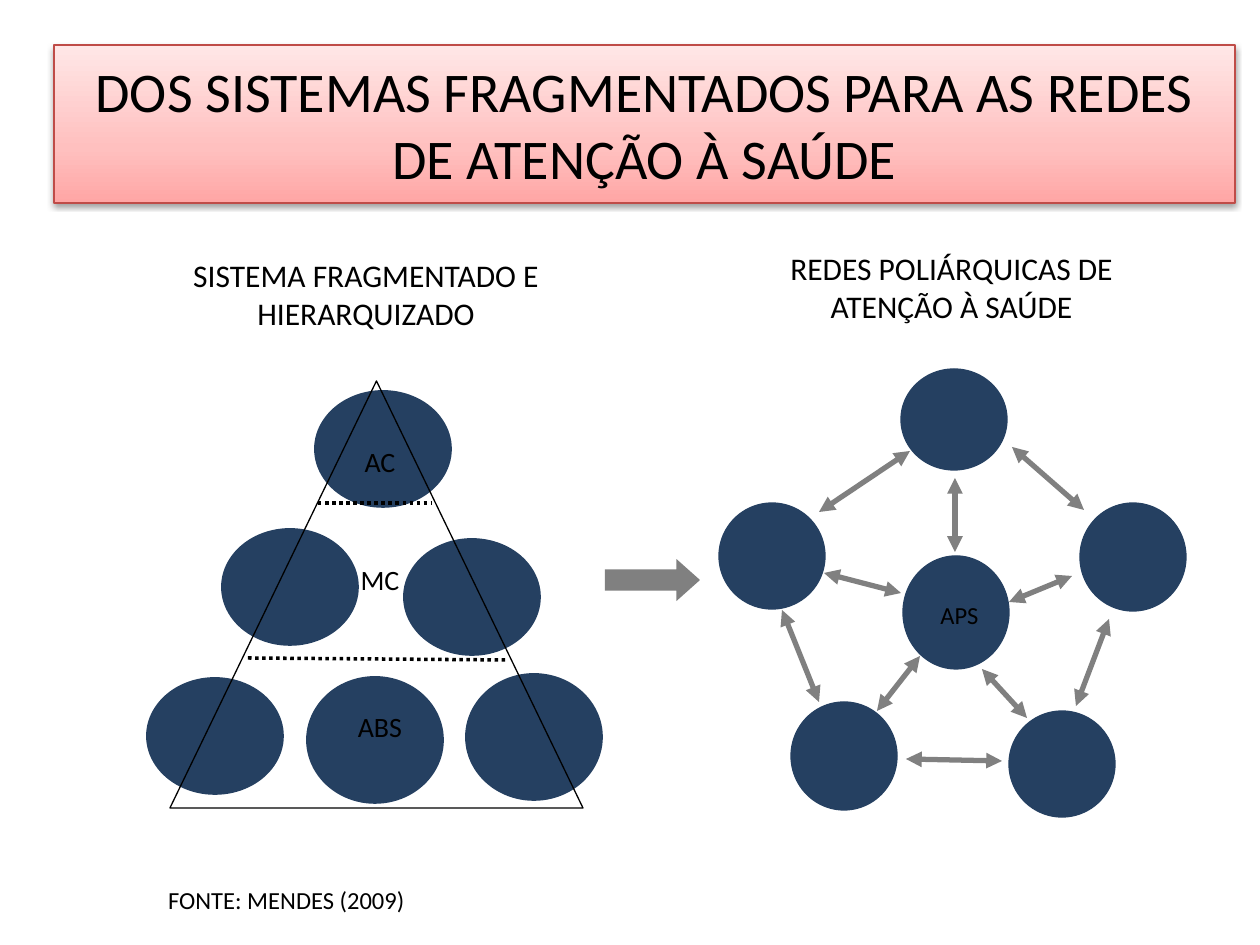
import copy

import lxml.etree
import pptx
import pptx.dml.color
import pptx.enum.dml
import pptx.enum.shapes
import pptx.enum.text
import pptx.oxml
import pptx.oxml.ns
import pptx.util

SCALE = 914400 / 126  # EMU per px
NAVY, GREY, BLACK = "254061", "808080", "000000"
SHAPES = pptx.enum.shapes.MSO_SHAPE
CENTER = pptx.enum.text.PP_ALIGN.CENTER
LEFT = pptx.enum.text.PP_ALIGN.LEFT
qn = pptx.oxml.ns.qn


def px(*lengths):
    return [pptx.util.Emu(round(length * SCALE)) for length in lengths]


def color(value):
    return pptx.dml.color.RGBColor.from_string(value)


def set_all(target, values):
    for name, value in values.items():
        setattr(target, name, value)


class SlideBuilder:
    def __init__(self, slide, font_name="Calibri"):
        self.slide = slide
        self.font_name = font_name

    def fill_text(self, shape, text, size, align=CENTER, margins=(13, 6),
                  anchor=pptx.enum.text.MSO_ANCHOR.TOP):
        horizontal, vertical = px(*margins)
        frame = shape.text_frame
        frame.text = text
        set_all(frame, {
            "word_wrap": True, "vertical_anchor": anchor,
            "auto_size": pptx.enum.text.MSO_AUTO_SIZE.NONE,
            "margin_left": horizontal, "margin_right": horizontal,
            "margin_top": vertical, "margin_bottom": vertical})
        paragraph = frame.paragraphs[0]
        paragraph.alignment = align
        font = paragraph.runs[0].font
        set_all(font, {"name": self.font_name, "size": pptx.util.Pt(size)})
        font.color.rgb = color(BLACK)

    def outline(self, line, line_color, width):
        line.color.rgb = color(line_color)
        line.width = pptx.util.Pt(width)

    def title(self, text, box, stops, line_color):
        """Fill the title with a bottom-to-top gradient and a soft shadow."""
        shape = self.slide.shapes.title
        set_all(shape, dict(zip(("left", "top", "width", "height"), px(*box))))
        shape.fill.gradient()
        shape.fill.gradient_angle = 90
        properties = shape._element.spPr
        stop_list = properties.find(".//" + qn("a:gsLst"))
        while len(stop_list) < len(stops):
            stop_list.append(copy.deepcopy(stop_list[0]))
        for stop, (position, value) in zip(shape.fill.gradient_stops, stops):
            stop.position = position
            stop.color.rgb = color(value)
        self.outline(shape.line, line_color, 0.75)
        properties.append(pptx.oxml.parse_xml(
            f'<a:effectLst {pptx.oxml.ns.nsdecls("a")}>'
            '<a:outerShdw blurRad="40000" dist="20000" dir="5400000" rotWithShape="0">'
            '<a:srgbClr val="000000"><a:alpha val="38000"/></a:srgbClr>'
            '</a:outerShdw></a:effectLst>'))
        self.fill_text(shape, text, 32, anchor=pptx.enum.text.MSO_ANCHOR.MIDDLE)

    def text(self, text, box, size, **style):
        self.fill_text(self.slide.shapes.add_textbox(*px(*box)), text, size, **style)

    def shape(self, kind, box, fill=None, line=None, width=0.75):
        shape = self.slide.shapes.add_shape(kind, *px(*box))
        shape.shadow.inherit = False
        if fill:
            shape.fill.solid()
            shape.fill.fore_color.rgb = color(fill)
        else:
            shape.fill.background()
        if line:
            self.outline(shape.line, line, width)
        else:
            shape.line.fill.background()
        return shape

    def line(self, points, line_color, width, dash=None, arrows=False):
        connector = self.slide.shapes.add_connector(
            pptx.enum.shapes.MSO_CONNECTOR.STRAIGHT, *px(*points))
        self.outline(connector.line, line_color, width)
        if dash:
            connector.line.dash_style = dash
        properties = connector._element.spPr
        if arrows:
            for end in ("a:headEnd", "a:tailEnd"):
                lxml.etree.SubElement(properties.find(qn("a:ln")), qn(end), type="triangle")
        lxml.etree.SubElement(properties, qn("a:effectLst"))


def draw_pyramid(builder):
    circles = [(315, 391, 116), (222, 529, 116), (404, 539, 116),
               (147, 678, 116), (307, 677, 126), (466, 674, 126)]
    for left, top, height in circles:
        builder.shape(SHAPES.OVAL, (left, top, 136, height), NAVY, NAVY, 1)
    for points in [(318, 503, 431, 503), (248, 658, 507, 660)]:
        builder.line(points, BLACK, 2, dash=pptx.enum.dml.MSO_LINE.ROUND_DOT)
    for level, top in [("AC", 438), ("MC", 557), ("ABS", 704)]:
        builder.text(level, (336, top, 88, 47), 16)
    builder.shape(SHAPES.ISOSCELES_TRIANGLE, (170, 381, 413, 427), line=BLACK)


def draw_network(builder):
    circles = [(901, 369, 101), (1080, 503, 108), (1009, 711, 106),
               (791, 702, 108), (719, 503, 106), (903, 556, 113)]
    for left, top, height in circles:
        builder.shape(SHAPES.OVAL, (left, top, 106, height), NAVY, NAVY)
    builder.text("APS", (915, 595, 89, 40), 14, margins=(11, 5))
    ring = [(1012, 447, 1084, 510), (1109, 619, 1076, 706), (1002, 761, 906, 759),
            (782, 610, 819, 702), (819, 512, 910, 451)]
    spokes = [(955, 478, 955, 552), (1009, 602, 1072, 576), (982, 669, 1027, 718),
              (920, 656, 877, 711), (824, 573, 901, 593)]
    for points in ring + spokes:
        builder.line(points, GREY, 3, arrows=True)


def main():
    presentation = pptx.Presentation()
    presentation.slide_width, presentation.slide_height = px(1260, 945)
    title_only = presentation.slide_layouts[5]
    builder = SlideBuilder(presentation.slides.add_slide(title_only))

    builder.title("DOS SISTEMAS FRAGMENTADOS PARA AS REDES DE ATENÇÃO À SAÚDE",
                  (54, 45, 1181, 158),
                  [(0, "FFA6A5"), (0.35, "FFC0BF"), (1, "FFE7E7")], "BF4C48")
    headings = [("SISTEMA FRAGMENTADO E HIERARQUIZADO", (155, 251, 422, 87)),
                ("REDES POLIÁRQUICAS DE ATENÇÃO À SAÚDE", (748, 244, 407, 87))]
    for heading, box in headings:
        builder.text(heading, box, 18, margins=(11, 5))
    draw_pyramid(builder)
    arrow = builder.shape(SHAPES.RIGHT_ARROW, (605, 559, 95, 42), GREY)
    arrow.adjustments[1] = 0.56
    draw_network(builder)
    builder.text("FONTE: MENDES (2009)", (155, 879, 336, 42), 14, align=LEFT)
    presentation.save("out.pptx")


if __name__ == "__main__":
    main()
